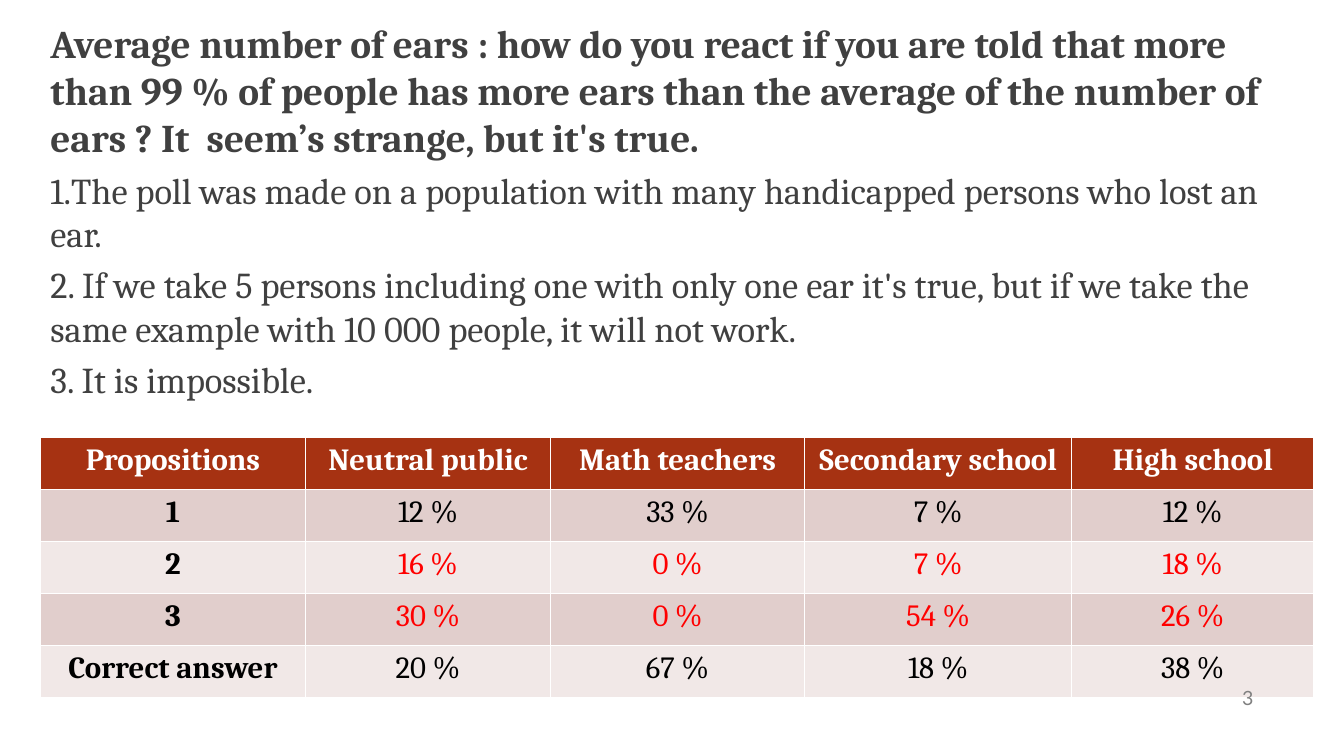
from lxml import etree
from pptx import Presentation
from pptx.dml.color import RGBColor
from pptx.enum.text import MSO_ANCHOR as Anchor, MSO_AUTO_SIZE as AutoSize, PP_ALIGN as Align
from pptx.oxml.ns import qn
from pptx.util import Inches, Pt

WHITE = RGBColor(0xFF, 0xFF, 0xFF)
BLACK = RGBColor(0x00, 0x00, 0x00)
RED = RGBColor(0xFF, 0x00, 0x00)
DARK_GREY = RGBColor(0x40, 0x40, 0x40)
GREY = RGBColor(0x80, 0x80, 0x80)
RUST = RGBColor(0xA6, 0x32, 0x12)
BANDS = (RGBColor(0xE1, 0xCE, 0xCC), RGBColor(0xF1, 0xE8, 0xE7))

MARGIN = Inches(0.4)
ROW_HEIGHT = Inches(0.516)
COLUMN_WIDTHS = (2.63, 2.43, 2.52, 2.65, 2.4)

QUESTION = ("Average number of ears : how do you react if you are told that more than 99 % "
            "of people has more ears than the average of the number of ears ? "
            "It  seem’s strange, but it's true.")
PROPOSITIONS = (
    "1.The poll was made on a population with many handicapped persons who lost an ear.",
    "2. If we take 5 persons including one with only one ear it's true, but if we take the "
    "same example with 10 000 people, it will not work.",
    "3. It is impossible.",
)
RESULTS = (
    ("Propositions", "Neutral public", "Math teachers", "Secondary school", "High school"),
    ("1", "12 %", "33 %", "7 %", "12 %"),
    ("2", "16 %", "0 %", "7 %", "18 %"),
    ("3", "30 %", "0 %", "54 %", "26 %"),
    ("Correct answer", "20 %", "67 %", "18 %", "38 %"),
)
RED_ROWS = (2, 3)


def write(paragraph, text, *, size, color, font="Cambria", bold=False, align=Align.LEFT):
    paragraph.alignment = align
    run = paragraph.add_run()
    run.text = text
    run.font.name = font
    run.font.size = Pt(size)
    run.font.bold = bold
    run.font.color.rgb = color


def remove_bullet(paragraph):
    properties = paragraph._p.get_or_add_pPr()
    properties.set("marL", "0")
    properties.set("indent", "0")
    etree.SubElement(properties, qn("a:buNone"))


def fill_body(body):
    """Put the question and its propositions in the body placeholder."""
    body.left, body.top = MARGIN, Inches(0.14)
    body.width, body.height = Inches(12.65), Inches(4.32)
    frame = body.text_frame
    frame.word_wrap = True
    frame.auto_size = AutoSize.NONE
    for index, text in enumerate((QUESTION, *PROPOSITIONS)):
        paragraph = frame.add_paragraph() if index else frame.paragraphs[0]
        remove_bullet(paragraph)
        paragraph.space_before = Pt(5.2 if index else 0)
        write(paragraph, text, size=26 if index else 28, color=DARK_GREY, bold=index == 0)


def add_results(slide):
    frame = slide.shapes.add_table(len(RESULTS), len(COLUMN_WIDTHS), MARGIN, Inches(4.34),
                                   Inches(sum(COLUMN_WIDTHS)), ROW_HEIGHT * len(RESULTS))
    table = frame.table
    for column, width in zip(table.columns, COLUMN_WIDTHS):
        column.width = Inches(width)
    for row, texts in enumerate(RESULTS):
        for column, text in enumerate(texts):
            cell = table.cell(row, column)
            cell.fill.solid()
            cell.fill.fore_color.rgb = BANDS[(row - 1) % 2] if row else RUST
            if row == 0:
                color = WHITE
            else:
                color = RED if row in RED_ROWS and column else BLACK
            write(cell.text_frame.paragraphs[0], text, size=22, color=color,
                  bold=row == 0 or column == 0, align=Align.CENTER)


def add_page_number(slide, number):
    box = slide.shapes.add_textbox(Inches(9.42), Inches(6.72), Inches(3.11), Inches(0.4))
    box.text_frame.word_wrap = True
    box.text_frame.vertical_anchor = Anchor.MIDDLE
    write(box.text_frame.paragraphs[0], number, size=14, color=GREY, font="Lato",
          align=Align.RIGHT)


def main():
    presentation = Presentation()
    presentation.slide_width = Inches(13.33)
    presentation.slide_height = Inches(7.5)
    slide = presentation.slides.add_slide(presentation.slide_layouts.get_by_name("Title and Content"))
    title = slide.shapes.title
    title.element.getparent().remove(title.element)
    add_results(slide)
    fill_body(slide.placeholders[1])
    add_page_number(slide, "3")
    presentation.save("out.pptx")


if __name__ == "__main__":
    main()
